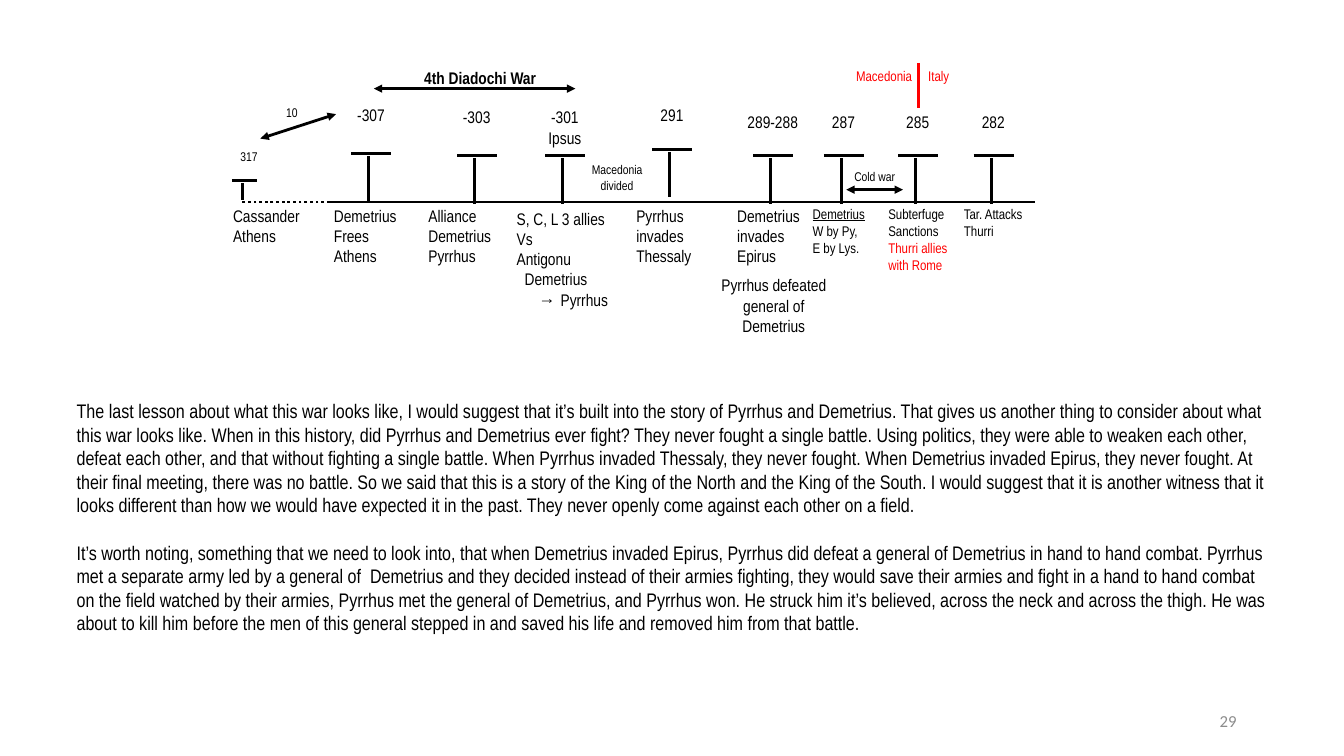
"""Build the slide on the wars of Pyrrhus and Demetrius: a timeline above two paragraphs."""
from dataclasses import dataclass

from lxml.etree import SubElement
from pptx import Presentation
from pptx.dml.color import RGBColor
from pptx.enum.dml import MSO_LINE as Dash
from pptx.enum.shapes import MSO_CONNECTOR as Connector
from pptx.enum.text import MSO_ANCHOR as Anchor, MSO_AUTO_SIZE as AutoSize, PP_ALIGN as Align
from pptx.oxml.ns import qn
from pptx.util import Pt


@dataclass(frozen=True)
class Theme:
    ink: str = "000000"
    accent: str = "FF0000"
    muted: str = "8C8C8C"
    font: str = "Arial Narrow"
    number_font: str = "Calibri"
    tiny: float = 9
    small: float = 10
    normal: float = 12
    body: float = 14
    stroke: float = 2
    inset: float = 3


THEME = Theme()


@dataclass(frozen=True)
class Line:
    text: str
    color: str = THEME.ink
    underline: bool = False
    indent: float = 0
    hanging: float = 0


@dataclass(frozen=True)
class Caption:
    left: float
    top: float
    width: float
    height: float
    lines: tuple[Line, ...]
    size: float = THEME.normal
    align: Align = Align.LEFT
    bold: bool = False
    font: str = THEME.font
    anchor: Anchor = Anchor.TOP


@dataclass(frozen=True)
class Stroke:
    x1: float
    y1: float
    x2: float
    y2: float
    color: str = THEME.ink
    arrows: bool = False
    dotted: bool = False


@dataclass(frozen=True)
class Event:
    stem: float
    dates: tuple[str, ...]
    date_top: float = 77
    bar_top: float = 111
    bar_width: float = 28.5
    stem_length: float = 32.5
    date_width: float = 50
    size: float = THEME.normal


def lines(*texts: str) -> tuple[Line, ...]:
    return tuple(Line(text) for text in texts)


EVENTS = (
    Event(173.5, ("317",), 103.5, 129, 18, 12, 27, THEME.tiny),
    Event(263.5, ("-307",), 72, 109.5),
    Event(339, ("-303",), 73.5),
    Event(402, ("-301", "Ipsus"), 73.5),
    Event(478.5, ("291",), 72, 106.5),
    Event(550.5, ("289-288",)),
    Event(601, ("287",)),
    Event(654, ("285",)),
    Event(708, ("282",)),
)

CAPTIONS = (
    Caption(163.5, 144, 58.5, 54, lines("Cassander", "Athens")),
    Caption(235.5, 144, 58.5, 54, lines("Demetrius", "Frees", "Athens")),
    Caption(303, 144, 58.5, 54, lines("Alliance", "Demetrius", "Pyrrhus")),
    Caption(366, 146, 76.5, 78.5, lines("S, C, L 3 allies", "Vs", "Antigonu") + (
        Line("Demetrius", indent=5.7), Line("→\tPyrrhus", indent=31.4, hanging=15.7))),
    Caption(451.5, 144, 58.5, 54, lines("Pyrrhus invades Thessaly")),
    Caption(523.5, 144, 54, 54, lines("Demetrius invades Epirus")),
    Caption(577.5, 144, 45, 54, (Line("Demetrius", underline=True),) + lines("W by Py,", "E by Lys."),
            THEME.small),
    Caption(631.5, 144, 54, 58.5, lines("Subterfuge", "Sanctions") + (
        Line("Thurri allies with Rome", THEME.accent),), THEME.small),
    Caption(685.5, 144, 54, 54, lines("Tar. Attacks Thurri"), THEME.small),
    Caption(505.5, 193.5, 94.5, 54, lines("Pyrrhus defeated general of", "Demetrius"), align=Align.CENTER),
    Caption(407, 113, 67.5, 28, lines("Macedonia divided"), THEME.tiny, Align.CENTER),
    Caption(600, 117.5, 49.5, 28, lines("Cold war"), THEME.tiny, Align.CENTER),
    Caption(195, 72, 27, 28, lines("10"), THEME.tiny, Align.CENTER),
    Caption(293.5, 45, 99, 18.5, lines("4th Diadochi War"), align=Align.CENTER, bold=True),
    Caption(594, 45, 60.5, 22.5, (Line("Macedonia", THEME.accent),), THEME.small, Align.RIGHT),
    Caption(660, 45, 60, 22.5, (Line("Italy", THEME.accent),), THEME.small),
    Caption(682, 500.5, 208.5, 29, (Line("29", THEME.muted),), align=Align.RIGHT,
            font=THEME.number_font, anchor=Anchor.MIDDLE),
)

STROKES = (
    Stroke(235.5, 144.3, 739.5, 144.3),
    Stroke(235.5, 144.3, 173, 144.3, dotted=True),
    Stroke(186, 99, 240, 81.5, arrows=True),
    Stroke(411, 63.3, 267, 63.3, arrows=True),
    Stroke(604.5, 135.5, 645, 135.5, arrows=True),
    Stroke(656, 45, 656, 77, THEME.accent),
)

LESSONS = lines(
    "The last lesson about what this war looks like, I would suggest that it’s built into the story of Pyrrhus and Demetrius. That gives us another thing to consider about what this war looks like. When in this history, did Pyrrhus and Demetrius ever fight? They never fought a single battle. Using politics, they were able to weaken each other, defeat each other, and that without fighting a single battle. When Pyrrhus invaded Thessaly, they never fought. When Demetrius invaded Epirus, they never fought. At their final meeting, there was no battle. So we said that this is a story of the King of the North and the King of the South. I would suggest that it is another witness that it looks different than how we would have expected it in the past. They never openly come against each other on a field.",
    "It’s worth noting, something that we need to look into, that when Demetrius invaded Epirus, Pyrrhus did defeat a general of Demetrius in hand to hand combat. Pyrrhus met a separate army led by a general of  Demetrius and they decided instead of their armies fighting, they would save their armies and fight in a hand to hand combat on the field watched by their armies, Pyrrhus met the general of Demetrius, and Pyrrhus won. He struck him it’s believed, across the neck and across the thigh. He was about to kill him before the men of this general stepped in and saved his life and removed him from that battle.",
)


def write_lines(frame, caption: Caption, gap: float = 0) -> None:
    frame.word_wrap = True
    frame.auto_size = AutoSize.NONE
    frame.vertical_anchor = caption.anchor
    for index, line in enumerate(caption.lines):
        para = frame.add_paragraph() if index else frame.paragraphs[0]
        para.alignment = caption.align
        para.space_before = Pt(gap if index else 0)
        layout = para._p.get_or_add_pPr()
        layout.set("marL", str(Pt(line.indent)))
        layout.set("indent", str(-Pt(line.hanging)))
        SubElement(layout, qn("a:buNone"))
        span = para.add_run()
        span.text = line.text
        span.font.name = caption.font
        span.font.size = Pt(caption.size)
        span.font.bold = caption.bold
        span.font.underline = line.underline
        span.font.color.rgb = RGBColor.from_string(line.color)


def draw_caption(page, caption: Caption) -> None:
    box = page.shapes.add_textbox(*map(Pt, (caption.left, caption.top, caption.width, caption.height)))
    frame = box.text_frame
    if caption.font == THEME.font:
        frame.margin_left = frame.margin_right = Pt(THEME.inset)
        frame.margin_top = frame.margin_bottom = Pt(THEME.inset)
    write_lines(frame, caption)


def draw_stroke(page, stroke: Stroke) -> None:
    ends = map(Pt, (stroke.x1, stroke.y1, stroke.x2, stroke.y2))
    connector = page.shapes.add_connector(Connector.STRAIGHT, *ends)
    connector.line.width = Pt(THEME.stroke)
    connector.line.color.rgb = RGBColor.from_string(stroke.color)
    if stroke.dotted:
        connector.line.dash_style = Dash.ROUND_DOT
    if stroke.arrows:
        for end in ("a:headEnd", "a:tailEnd"):
            SubElement(connector.line._get_or_add_ln(), qn(end), type="triangle")
    SubElement(connector._element.spPr, qn("a:effectLst"))


def draw_event(page, event: Event) -> None:
    left = event.stem - 0.44 * event.bar_width
    foot = event.bar_top + 2
    draw_stroke(page, Stroke(left, event.bar_top, left + event.bar_width, event.bar_top))
    draw_stroke(page, Stroke(event.stem, foot, event.stem, foot + event.stem_length))
    date_left = event.stem - 0.47 * event.date_width + (3.5 if event.size == THEME.tiny else 0)
    draw_caption(page, Caption(date_left, event.date_top, event.date_width, 38,
                               lines(*event.dates), event.size, Align.CENTER))


def main() -> None:
    deck = Presentation()
    deck.slide_width, deck.slide_height = Pt(960), Pt(540)
    page = deck.slides.add_slide(deck.slide_layouts[1])
    title = page.shapes.title._element
    title.getparent().remove(title)
    body = page.placeholders[1]
    story = Caption(47.5, 281.5, 865, 198.5, LESSONS, THEME.body)
    body.left, body.top, body.width, body.height = map(
        Pt, (story.left, story.top, story.width, story.height))
    write_lines(body.text_frame, story, gap=17)
    for event in EVENTS:
        draw_event(page, event)
    for stroke in STROKES:
        draw_stroke(page, stroke)
    for caption in CAPTIONS:
        draw_caption(page, caption)
    deck.save("out.pptx")


if __name__ == "__main__":
    main()
